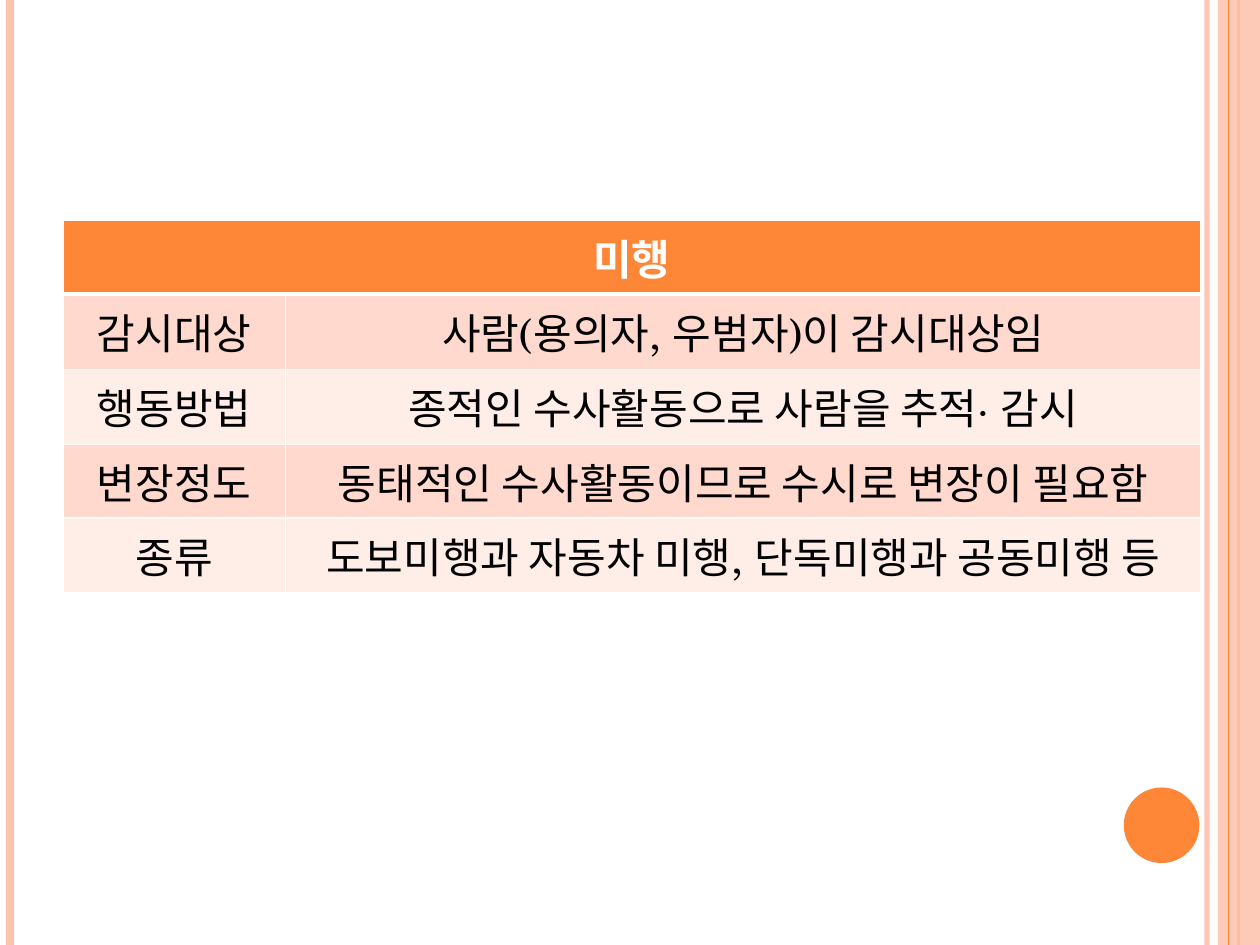
from lxml import etree
from pptx import Presentation
from pptx.dml.color import RGBColor
from pptx.enum import shapes, text
from pptx.oxml import ns
from pptx.util import Pt

FONT = "TeX Gyre Schola"
ORANGE, PEACH, WHITE, BLACK = "FE8637", "FEC3AE", "FFFFFF", "000000"
BANDS = ["FFD9CE", "FFEDE8"]
PAGE_WIDTH, PAGE_HEIGHT = 720, 540

TITLE = "미행"
ROWS = [
    ("감시대상", "사람(용의자, 우범자)이 감시대상임"),
    ("행동방법", "종적인 수사활동으로 사람을 추적· 감시"),
    ("변장정도", "동태적인 수사활동이므로 수시로 변장이 필요함"),
    ("종류", "도보미행과 자동차 미행, 단독미행과 공동미행 등"),
]
COLUMN_WIDTHS = [127.1, 523.1]
ROW_HEIGHT = 29.5

BACK_STRIPES = [(689.8, PEACH, 3, 93), (5.8, PEACH, 4.5, 100), (707.8, ORANGE, 1.5, 100)]
FRONT_STRIPES = [(702, ORANGE, 0.75, 100)]
BAND = (696, 0, 24, PAGE_HEIGHT)
DOT = (642.2, 450, 43.2, 43.2)


def color(value):
    return RGBColor.from_string(value)


def add_child(parent, tag, **attributes):
    return etree.SubElement(parent, ns.qn(tag), **attributes)


def set_opacity(element, percent):
    for tint in element.iter(ns.qn("a:srgbClr")):
        add_child(tint, "a:alpha", val=str(percent * 1000))


def add_stripes(page, stripes):
    for x, tint, width, opacity in stripes:
        stripe = page.shapes.add_connector(
            shapes.MSO_CONNECTOR.STRAIGHT, Pt(x), 0, Pt(x), Pt(PAGE_HEIGHT))
        stripe.line.color.rgb = color(tint)
        stripe.line.width = Pt(width)
        properties = stripe._element.spPr
        if opacity < 100:
            set_opacity(properties, opacity)
        add_child(properties, "a:effectLst")


def add_solid(page, kind, place, tint, opacity=100):
    shape = page.shapes.add_shape(kind, *map(Pt, place))
    shape.shadow.inherit = False
    shape.fill.solid()
    shape.fill.fore_color.rgb = color(tint)
    shape.line.fill.background()
    if opacity < 100:
        set_opacity(shape._element.spPr, opacity)


def set_borders(cell, top, bottom):
    properties = cell._tc.get_or_add_tcPr()
    sides = [("a:lnL", 1), ("a:lnR", 1), ("a:lnT", top), ("a:lnB", bottom)]
    for index, (tag, width) in enumerate(sides):
        border = add_child(properties, tag, w=str(Pt(width)))
        add_child(add_child(border, "a:solidFill"), "a:srgbClr", val=WHITE)
        properties.insert(index, border)


def style_cell(cell, wording, fill, ink, bold):
    cell.text_frame.text = wording
    cell.fill.solid()
    cell.fill.fore_color.rgb = color(fill)
    para = cell.text_frame.paragraphs[0]
    para.alignment = text.PP_ALIGN.CENTER
    for span in para.runs:
        span.font.name = FONT
        span.font.size = Pt(24)
        span.font.bold = bold
        span.font.color.rgb = color(ink)


def add_summary_table(page):
    count = len(ROWS) + 1
    table = page.shapes.add_table(
        count, 2, Pt(36), Pt(126), Pt(sum(COLUMN_WIDTHS)), Pt(count * ROW_HEIGHT)).table
    for column, width in zip(table.columns, COLUMN_WIDTHS):
        column.width = Pt(width)
    table.cell(0, 0).merge(table.cell(0, 1))
    style_cell(table.cell(0, 0), TITLE, ORANGE, WHITE, True)
    for row, wordings in enumerate(ROWS, 1):
        for column, wording in enumerate(wordings):
            style_cell(table.cell(row, column), wording, BANDS[(row - 1) % 2], BLACK, False)
    for row in range(count):
        for column in range(2):
            set_borders(table.cell(row, column), 3 if row == 1 else 1, 3 if row == 0 else 1)


def main():
    deck = Presentation()
    deck.slide_width, deck.slide_height = Pt(PAGE_WIDTH), Pt(PAGE_HEIGHT)
    page = deck.slides.add_slide(deck.slide_layouts[6])
    add_stripes(page, BACK_STRIPES)
    add_solid(page, shapes.MSO_SHAPE.RECTANGLE, BAND, PEACH, 87)
    add_stripes(page, FRONT_STRIPES)
    add_solid(page, shapes.MSO_SHAPE.OVAL, DOT, ORANGE)
    add_summary_table(page)
    deck.save("out.pptx")


if __name__ == "__main__":
    main()
